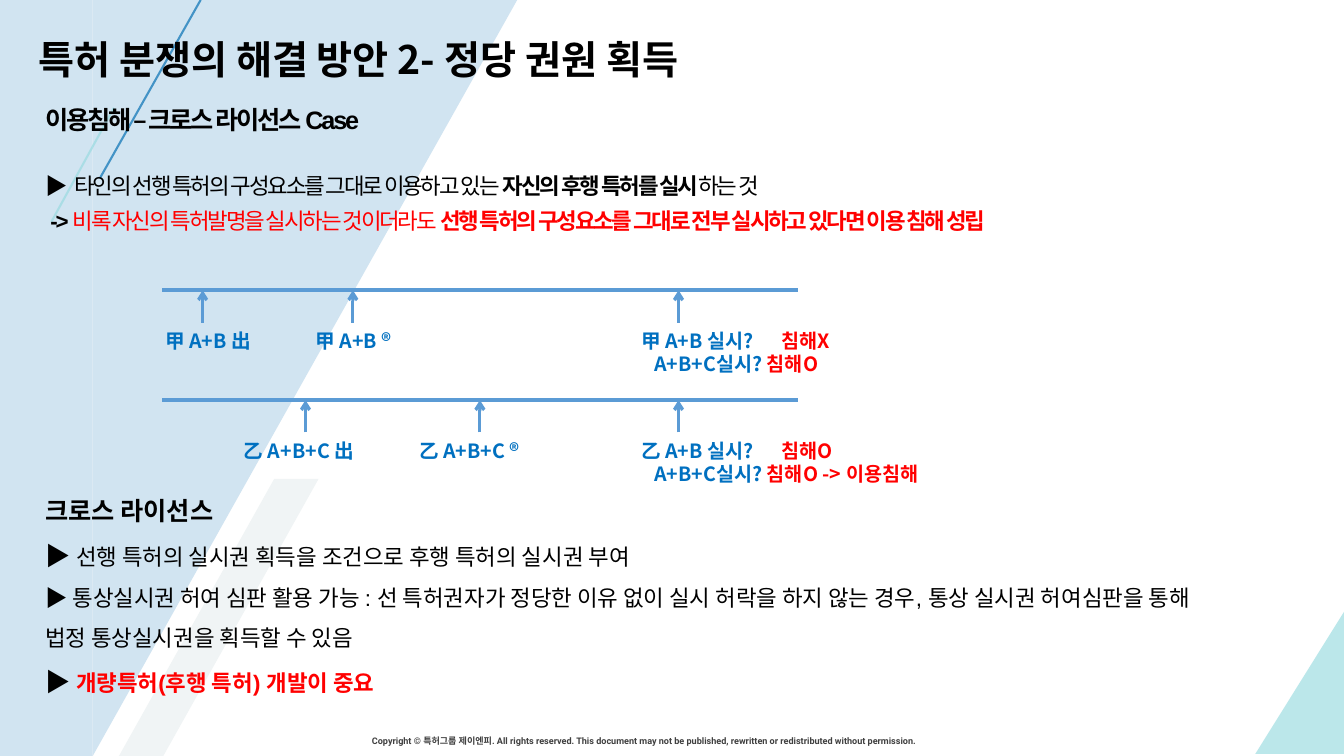
from lxml import etree
from pptx import Presentation
from pptx import util as u
from pptx.dml.color import RGBColor
from pptx.enum import shapes, text
from pptx.oxml.ns import qn

INK = {"black": "000000", "grey": "404040", "red": "FF0000", "blue": "0070C0",
       "sky": "5B9BD5", "deep": "016DB2", "mint": "98DBE0", "pale": "F0F4F5"}
SANS = "Noto Sans CJK KR"
KIND = shapes.MSO_SHAPE


def sub(node, tag, **attrs):
    return etree.SubElement(node, qn(tag), **attrs)


class Page:
    """One slide on a grid of tenth-inch columns and rows."""

    def __init__(self, deck):
        self.cell = u.Inches(0.1)
        self.slide = deck.slides.add_slide(deck.slide_layouts[6])

    def span(self, *cells):
        return [round(c * self.cell) for c in cells]

    def tint(self, fill, ink, alpha=None):
        """Set a solid colour, with opacity in percent."""
        fill.solid()
        fill.fore_color.rgb = RGBColor.from_string(INK[ink])
        if alpha:
            hue = fill._xPr.find(qn("a:solidFill"))[0]
            sub(hue, "a:alpha", val=str(alpha * 1000))

    def shape(self, kind, box, ink, alpha=None, flip=None, adj=None):
        item = self.slide.shapes.add_shape(kind, *self.span(*box))
        item.shadow.inherit = False
        item.line.fill.background()
        self.tint(item.fill, ink, alpha)
        if flip:
            item._element.spPr.find(qn("a:xfrm")).set(flip, "1")
        if adj:
            item.adjustments[0] = adj

    def line(self, ends, ink, width, alpha=None, arrow=False):
        item = self.slide.shapes.add_connector(
            shapes.MSO_CONNECTOR.STRAIGHT, *self.span(*ends))
        item.line.width = u.Pt(width)
        self.tint(item.line.fill, ink, alpha)
        if arrow:
            sub(item.line._get_or_add_ln(), "a:tailEnd", type="arrow")
        sub(item._element.spPr, "a:effectLst")

    def text(self, box, paras, **base):
        """Add a text box; each paragraph is (runs, options over base)."""
        frame = self.slide.shapes.add_textbox(*self.span(*box)).text_frame
        frame.word_wrap = True
        frame.vertical_anchor = text.MSO_ANCHOR.TOP
        for i, (runs, opts) in enumerate(paras):
            para = frame.paragraphs[0] if i == 0 else frame.add_paragraph()
            self.fill(para, runs, {**base, **opts})

    def fill(self, para, runs, look):
        props = para._p.get_or_add_pPr()
        if "left" in look:
            props.set("marL", str(round(look["left"] * self.cell)))
            props.set("indent", "0")
        if "tab" in look:
            stops = sub(props, "a:tabLst")
            sub(stops, "a:tab", pos=str(round(look["tab"] * self.cell)), algn="l")
        if "lead" in look:
            para.line_spacing = look["lead"]
        if "before" in look:
            para.space_before = u.Pt(look["before"])
        self.style(para.font, look)
        for words, opts in runs:
            run = para.add_run()
            run.text = words
            self.style(run.font, opts)
            rpr = run._r.get_or_add_rPr()
            if "track" in look:
                rpr.set("spc", str(look["track"]))
            if look["face"] == SANS:
                sub(rpr, "a:ea", typeface=SANS)
            if "edge" in look:
                edge = etree.Element(qn("a:ln"), w=str(u.Pt(look["edge"])))
                sub(sub(edge, "a:solidFill"), "a:srgbClr", val=INK[look["ink"]])
                rpr.insert(0, edge)

    def style(self, font, look):
        if "face" in look:
            font.name = look["face"]
        if "size" in look:
            font.size = u.Pt(look["size"])
        if "bold" in look:
            font.bold = look["bold"]
        if "ink" in look:
            font.color.rgb = RGBColor.from_string(INK[look["ink"]])


def backdrop(page):
    page.shape(KIND.RECTANGLE, (0, 0, 9.2, 75), "deep", 18)
    page.shape(KIND.RIGHT_TRIANGLE, (9.2, 0, 42.1, 75), "deep", 18, "flipV")
    page.shape(KIND.PARALLELOGRAM, (11.8, 47.5, 19.8, 27.5), "pale", adj=0.778)
    page.shape(KIND.RIGHT_TRIANGLE, (124.5, 60.7, 8.8, 14.1), "mint", 65, "flipH")
    page.line((19.9, 0, 9.9, 17.7), "deep", 1.5, 67)
    page.line((11.3, 10.7, 5.1, 22), "mint", 1.5, 67)
    notice = ("Copyright © 특허그룹 제이엔피. All rights reserved. This document may "
              "not be published, rewritten or redistributed without permission.")
    page.text((35.9, 72.5, 82.9, 2.1), [([(notice, {})], {})],
              face="Roboto", size=6.5, bold=True, ink="grey")


def timeline(page, top, marks, who, verdicts):
    """Draw one party's line, its dated marks and the final verdicts."""
    page.line((16.1, top, 79.1, top), "sky", 3)
    look = dict(face=SANS, size=14, bold=True, ink="blue", lead=u.Pt(16.4))
    under = top + 3.2
    for x, left, width, words in marks:
        page.line((x, under, x, top), "sky", 2.25, arrow=True)
        page.text((left, under + 0.2, width, 3.4), [([(words, {})], {})], **look)
    page.line((67.3, under, 67.3, top), "sky", 2.25, arrow=True)
    first, second = [(v, {"ink": "red"}) for v in verdicts]
    page.text((62.6, under + 0.2, 36, 5.7), [
        ([(f"{who} A+B 실시?\t", {}), first], {"tab": 13.9}),
        ([("A+B+C실시? ", {}), second], {"left": 1.3})], **look)


def main():
    deck = Presentation()
    deck.slide_width, deck.slide_height = u.Inches(13.33), u.Inches(7.5)
    page = Page(deck)
    backdrop(page)
    bold, red = {"bold": True}, {"ink": "red"}
    body = dict(face="Arial", size=16, bold=False, ink="black")
    head = {"size": 18, "bold": True}

    page.text((3.5, 9.9, 115.2, 14.1), [
        ([("이용침해 – 크로스 라이선스 Case", {})], head),
        ([("▶\t타인의 선행 특허의 구성요소를 그대로 이용하고 있는 ", {}),
          ("자신의 후행 특허를 실시", bold), ("하는 것", {})],
         {"lead": u.Pt(25), "before": 21, "tab": 2.9}),
        ([("-> ", bold), ("비록 자신의 특허발명을 실시하는 것이더라도 ", red),
          ("선행 특허의 구성요소를 그대로 전부 실시하고 있다면 이용 침해 성립",
           {**bold, **red})], {"lead": u.Pt(25), "left": 0.5}),
    ], track=-150, **body)

    timeline(page, 28.8, [(20.1, 15.4, 10.5, "甲 A+B 出"),
                          (35, 30.3, 13, "甲 A+B ®")],
             "甲", ("침해X", "침해O"))
    timeline(page, 39.7, [(30.3, 23.2, 16, "乙 A+B+C 出"),
                          (47.6, 40.6, 16, "乙 A+B+C ®")],
             "乙", ("침해O", "침해O -> 이용침해"))

    mark = ("▶ ", {"size": 18})
    page.text((3.5, 47.1, 119.7, 22.1), [
        ([("크로스 라이선스", {})], head),
        ([mark, ("선행 특허의 실시권 획득을 조건으로 후행 특허의 실시권 부여", {})], {}),
        ([("▶ 통상실시권 허여 심판 활용 가능 : 선 특허권자가 정당한 이유 없이 "
           "실시 허락을 하지 않는 경우, 통상 실시권 허여심판을 통해 법정 "
           "통상실시권을 획득할 수 있음", {})], {}),
        ([mark, ("개량특허(후행 특허) 개발이 중요", {**bold, **red})], {}),
    ], lead=1.5, **body)

    page.text((2.8, 2.7, 116, 5.7),
              [([("특허 분쟁의 해결 방안 2- 정당 권원 획득", {})], {})],
              face=SANS, size=28, bold=True, ink="black", edge=0.25, lead=u.Pt(36))
    deck.save("out.pptx")


if __name__ == "__main__":
    main()
